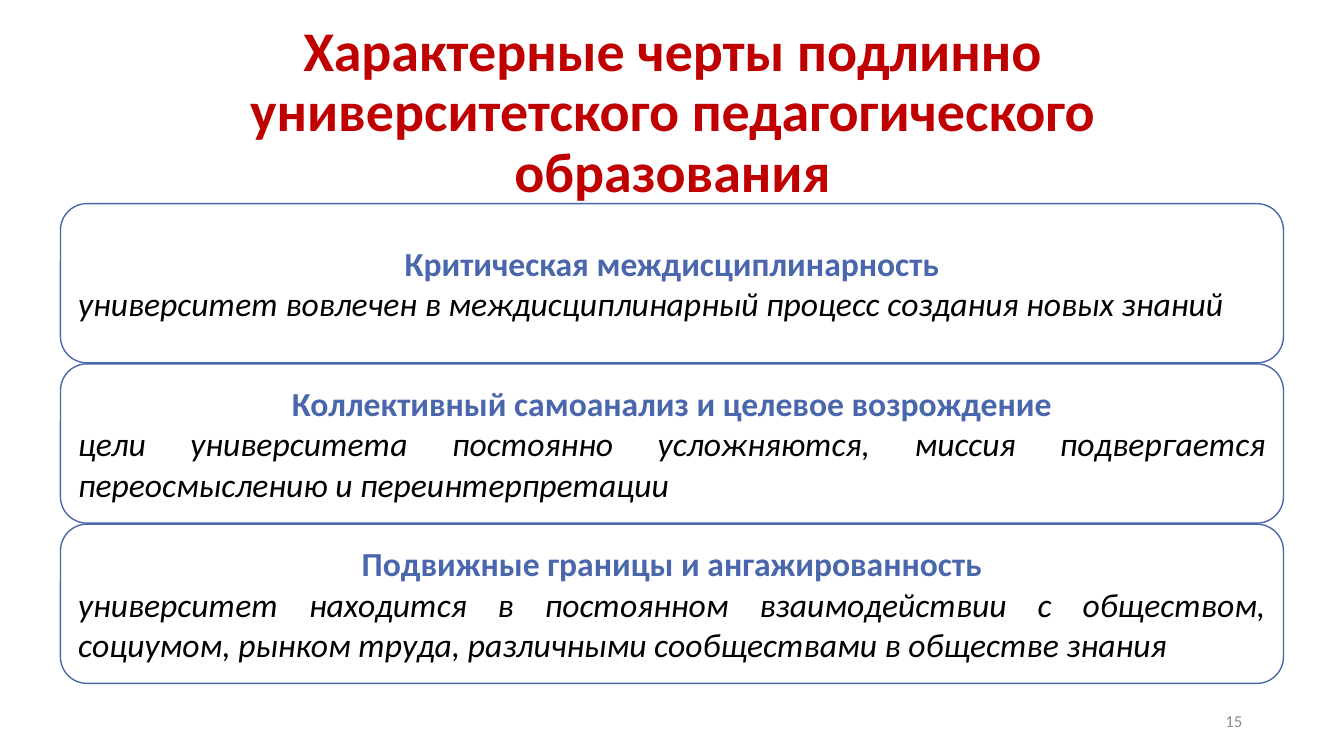
from pptx import Presentation
from pptx import util as u
from pptx.dml.color import RGBColor
from pptx.enum import shapes, text

PX = u.Inches(1) // 100
FONT = "Calibri"
COLORS = {
    "title": "C00000",
    "accent": "4A66AC",
    "body": "000000",
    "card": "FFFFFF",
    "number": "8C8C8C",
}
TRAITS = [
    ("Критическая междисциплинарность",
     "университет вовлечен в междисциплинарный процесс создания новых знаний"),
    ("Коллективный самоанализ и целевое возрождение",
     "цели университета постоянно усложняются, миссия подвергается "
     "переосмыслению и переинтерпретации"),
    ("Подвижные границы и ангажированность",
     "университет находится в постоянном взаимодействии с обществом, социумом, "
     "рынком труда, различными сообществами в обществе знания"),
]
CARD_LEFT, CARD_TOP, CARD_WIDTH, CARD_HEIGHT = 60, 202, 1213, 158
CARD_STEP = 159


def color(name):
    return RGBColor.from_string(COLORS[name])


def px(*lengths):
    return [length * PX for length in lengths]


def write(paragraph, words, size, color_name, align, bold=False, italic=False):
    paragraph.text = words
    paragraph.alignment = align
    font = paragraph.font
    font.name = FONT
    font.size = u.Pt(size)
    font.bold = bold
    font.italic = italic
    font.color.rgb = color(color_name)


def add_label(slide, box, words, size, color_name, align, bold=False, spacing=1.0):
    frame = slide.shapes.add_textbox(*px(*box)).text_frame
    frame.word_wrap = True
    frame.vertical_anchor = text.MSO_ANCHOR.MIDDLE
    write(frame.paragraphs[0], words, size, color_name, align, bold)
    frame.paragraphs[0].line_spacing = spacing


def add_trait(slide, top, heading, explanation):
    card = slide.shapes.add_shape(
        shapes.MSO_SHAPE.ROUNDED_RECTANGLE,
        *px(CARD_LEFT, top, CARD_WIDTH, CARD_HEIGHT))
    card.shadow.inherit = False
    card.fill.solid()
    card.fill.fore_color.rgb = color("card")
    card.line.color.rgb = color("accent")
    card.line.width = u.Pt(1)
    frame = card.text_frame
    frame.word_wrap = True
    frame.vertical_anchor = text.MSO_ANCHOR.MIDDLE
    frame.margin_left = frame.margin_right = 10 * PX
    frame.margin_top = frame.margin_bottom = 10 * PX
    write(frame.paragraphs[0], heading, 24, "accent", text.PP_ALIGN.CENTER, bold=True)
    write(frame.add_paragraph(), explanation, 24, "body", text.PP_ALIGN.JUSTIFY,
          italic=True)


def main():
    deck = Presentation()
    deck.slide_width, deck.slide_height = px(1333, 750)
    slide = deck.slides.add_slide(deck.slide_layouts[6])
    add_label(slide, (92, 40, 1150, 145),
              "Характерные черты подлинно университетского педагогического образования",
              40, "title", text.PP_ALIGN.CENTER, bold=True, spacing=0.9)
    for row, (heading, explanation) in enumerate(TRAITS):
        add_trait(slide, CARD_TOP + row * CARD_STEP, heading, explanation)
    add_label(slide, (942, 695, 300, 40), "15", 12, "number", text.PP_ALIGN.RIGHT)
    deck.save("out.pptx")


if __name__ == "__main__":
    main()
